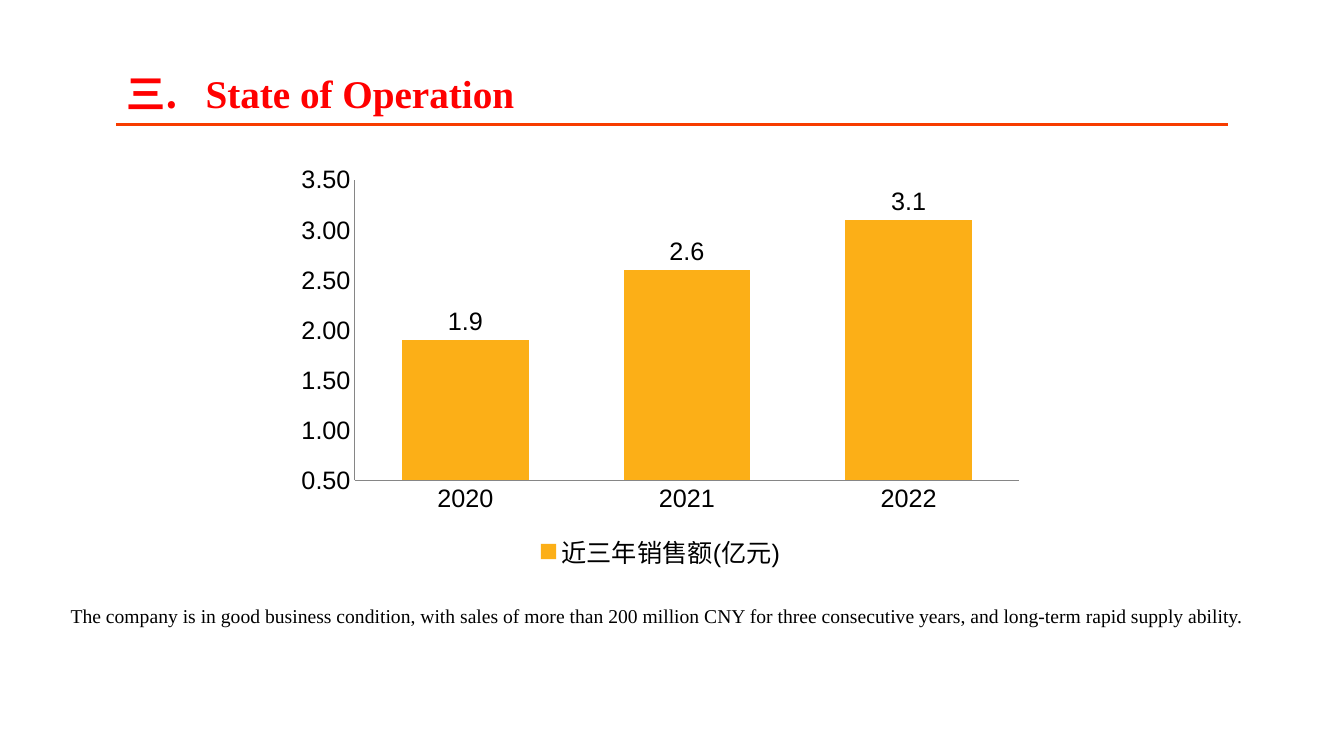
from lxml.etree import SubElement
from pptx import Presentation
from pptx.chart.data import CategoryChartData
from pptx.dml.color import RGBColor
from pptx.enum.chart import XL_CHART_TYPE, XL_LABEL_POSITION, XL_LEGEND_POSITION, XL_TICK_MARK
from pptx.enum.shapes import MSO_CONNECTOR
from pptx.enum.text import MSO_ANCHOR
from pptx.oxml.ns import qn
from pptx.util import Cm, Pt

COLORS = {"title": "FF0000", "rule": "F73C00", "bar": "FCAF17", "text": "000000", "axis": "868686"}
CJK_FONT = "Noto Sans CJK SC"
LATIN_FONT = "Times New Roman"
TITLE_FORMAT = {"size": Pt(28), "bold": True}
BODY_FORMAT = {"size": Pt(14), "bold": False}
CHART_FORMAT = {"size": Pt(18), "bold": False, "name": "Arial"}


def color(name):
    return RGBColor.from_string(COLORS[name])


def format_font(font, values, color_name):
    for attribute, value in values.items():
        setattr(font, attribute, value)
    font.color.rgb = color(color_name)


def add_text(slide, box, runs, values, color_name, anchor, line_spacing=1.0, tab=None):
    shape = slide.shapes.add_textbox(*map(Cm, box))
    frame = shape.text_frame
    frame.word_wrap = True
    frame.vertical_anchor = anchor
    paragraph = frame.paragraphs[0]
    paragraph.line_spacing = line_spacing
    if tab:
        tabs = SubElement(paragraph._p.get_or_add_pPr(), qn("a:tabLst"))
        SubElement(tabs, qn("a:tab"), pos=str(Cm(tab)), algn="l")
    for text, font_name in runs:
        run = paragraph.add_run()
        run.text = text
        format_font(run.font, {**values, "name": font_name}, color_name)
        SubElement(run._r.get_or_add_rPr(), qn("a:ea"), typeface=font_name)


def add_rule(slide, left, right, top):
    line = slide.shapes.add_connector(MSO_CONNECTOR.STRAIGHT, Cm(left), Cm(top), Cm(right), Cm(top))
    line.line.color.rgb = color("rule")
    line.line.width = Pt(2.25)
    SubElement(line._element.spPr, qn("a:effectLst"))


def format_axis(axis):
    axis.has_major_gridlines = False
    axis.major_tick_mark = XL_TICK_MARK.NONE
    axis.minor_tick_mark = XL_TICK_MARK.NONE
    axis.format.line.color.rgb = color("axis")
    axis.format.line.width = Pt(0.75)
    format_font(axis.tick_labels.font, CHART_FORMAT, "text")


def add_sales_chart(slide, box):
    data = CategoryChartData()
    data.categories = ["2020", "2021", "2022"]
    data.add_series("近三年销售额(亿元)", [1.9, 2.6, 3.1])
    chart = slide.shapes.add_chart(XL_CHART_TYPE.COLUMN_CLUSTERED, *map(Cm, box), data).chart
    format_font(chart.font, CHART_FORMAT, "text")
    chart.has_title = False
    chart.has_legend = True
    chart.legend.position = XL_LEGEND_POSITION.BOTTOM
    chart.legend.include_in_layout = False
    format_font(chart.legend.font, CHART_FORMAT, "text")

    format_axis(chart.category_axis)
    value_axis = chart.value_axis
    format_axis(value_axis)
    scale = {"minimum_scale": 0.5, "maximum_scale": 3.5, "major_unit": 0.5}
    for attribute, value in scale.items():
        setattr(value_axis, attribute, value)
    value_axis.tick_labels.number_format = "#,##0.00;[Red]\\-#,##0.00"
    value_axis.tick_labels.number_format_is_linked = False

    plot = chart.plots[0]
    plot.gap_width = 75
    plot.vary_by_categories = False
    series = plot.series[0]
    series.format.fill.solid()
    series.format.fill.fore_color.rgb = color("bar")
    labels = series.data_labels
    labels.show_value = True
    labels.position = XL_LABEL_POSITION.OUTSIDE_END
    format_font(labels.font, CHART_FORMAT, "text")


def main():
    presentation = Presentation()
    presentation.slide_width = Cm(33.87)
    presentation.slide_height = Cm(19.05)
    slide = presentation.slides.add_slide(presentation.slide_layouts[6])
    add_rule(slide, 2.93, 30.94, 3.13)
    add_text(slide, (2.93, 1.68, 30.7, 1.4),
             [("三.\t", CJK_FONT), ("State of Operation", LATIN_FONT)],
             TITLE_FORMAT, "title", MSO_ANCHOR.BOTTOM, line_spacing=0.95, tab=2)
    add_sales_chart(slide, (7.22, 3.97, 18.85, 10.52))
    add_text(slide, (1.53, 15.09, 30.6, 0.86),
             [("The company is in good business condition, with sales of more than 200 million CNY "
               "for three consecutive years, and long-term rapid supply ability.", LATIN_FONT)],
             BODY_FORMAT, "text", MSO_ANCHOR.TOP)
    presentation.save("out.pptx")


if __name__ == "__main__":
    main()
